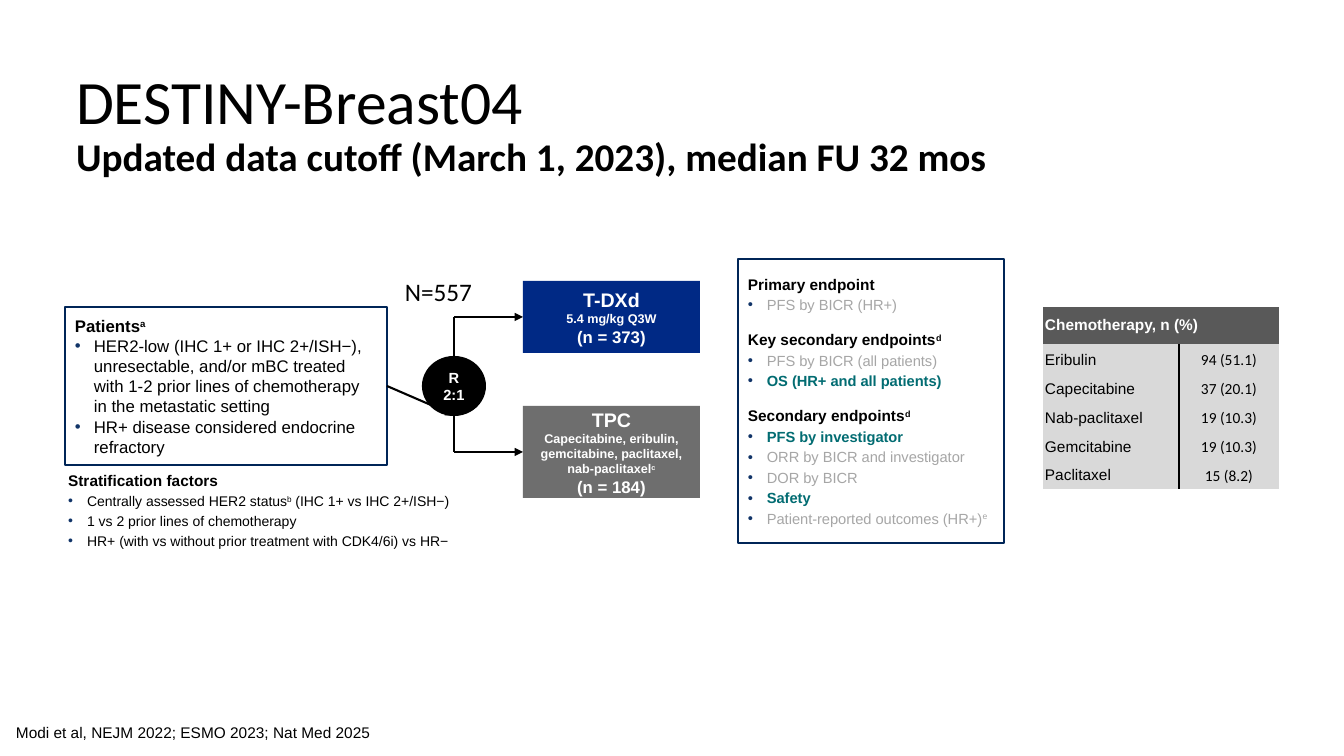
from dataclasses import dataclass
from typing import NamedTuple

from lxml import etree
from pptx import Presentation
from pptx.dml.color import RGBColor
from pptx.enum.shapes import MSO_CONNECTOR, MSO_SHAPE
from pptx.enum.text import MSO_ANCHOR, MSO_AUTO_SIZE, PP_ALIGN
from pptx.oxml.ns import qn
from pptx.util import Pt

RECTANGLE, OVAL = MSO_SHAPE.RECTANGLE, MSO_SHAPE.OVAL
STRAIGHT = MSO_CONNECTOR.STRAIGHT
TOP, MIDDLE = MSO_ANCHOR.TOP, MSO_ANCHOR.MIDDLE
LEFT, CENTER = PP_ALIGN.LEFT, PP_ALIGN.CENTER
NO_AUTOFIT = MSO_AUTO_SIZE.NONE
LEFT_SIDE, RIGHT_SIDE, OVAL_LEFT = 1, 3, 2
EMU_PER_PX = 914400 / 100.8
PLAIN_TABLE = "{2D5ABB26-0587-4C30-8999-92F81FD0307C}"


class Style(NamedTuple):
    size: float
    color: str = "000000"
    bold: bool = False
    font: str = "Arial"
    bullet: bool = False


@dataclass(frozen=True)
class Theme:
    black: str = "000000"
    frame: str = "002557"
    bullet: str = "113468"
    trial_arm: str = "002985"
    control_arm: str = "6E6E6E"
    table_head: str = "595959"
    table_body: str = "D9D9D9"
    title: Style = Style(44, font="Calibri")
    subtitle: Style = Style(28, bold=True, font="Calibri")
    heading: Style = Style(11, bold=True)
    factor: Style = Style(10, bullet=True)
    muted: Style = Style(10.5, "A6A6A6", bullet=True)
    updated: Style = Style(10.5, "026C72", True, bullet=True)
    patient_heading: Style = Style(12, bold=True)
    patient: Style = Style(12, bullet=True)
    arm_name: Style = Style(14, "FFFFFF", True)
    arm_detail: Style = Style(9, "FFFFFF", True)
    arm_count: Style = Style(12, "FFFFFF", True)
    ratio: Style = Style(10.5, "FFFFFF", True)
    table_heading: Style = Style(11, "FFFFFF", True)
    cell: Style = Style(11)
    count: Style = Style(11, font="Calibri")
    enrolled: Style = Style(18, font="Calibri")


THEME = Theme()


def px(length):
    return round(length * EMU_PER_PX)


def rgb(color):
    return RGBColor.from_string(color)


def format_run(run, style):
    run.font.size = Pt(style.size)
    run.font.bold = style.bold
    run.font.name = style.font
    run.font.color.rgb = rgb(style.color)


def set_bullet(paragraph, bullet):
    properties = paragraph._p.get_or_add_pPr()
    indent = px(19) if bullet else 0
    properties.set("marL", str(indent))
    properties.set("indent", str(-indent))
    if not bullet:
        etree.SubElement(properties, qn("a:buNone"))
        return
    color = etree.SubElement(properties, qn("a:buClr"))
    etree.SubElement(color, qn("a:srgbClr"), val=THEME.bullet)
    etree.SubElement(properties, qn("a:buFont"), typeface="Arial")
    etree.SubElement(properties, qn("a:buChar"), char="•")


def write(frame, lines, align=LEFT, before=0, after=0, gap=0, spacing=1.0):
    """Text between carets is raised; a heading after the first line gets the gap."""
    for index, (style, text) in enumerate(lines):
        paragraph = frame.paragraphs[0] if index == 0 else frame.add_paragraph()
        set_bullet(paragraph, style.bullet)
        paragraph.alignment = align
        paragraph.line_spacing = spacing
        extra = 0 if style.bullet else gap
        paragraph.space_before = Pt(before + extra if index else 0)
        paragraph.space_after = Pt(after)
        for position, part in enumerate(text.split("^")):
            if part:
                run = paragraph.add_run()
                run.text = part
                format_run(run, style)
                if position % 2:
                    run._r.get_or_add_rPr().set("baseline", "30000")


def place(shape, left, top, width, height):
    shape.left, shape.top = px(left), px(top)
    shape.width, shape.height = px(width), px(height)


def add_title(slide, name, cutoff):
    title = slide.shapes.title
    place(title, 66, 53, 1159, 146)
    frame = title.text_frame
    frame.text = f"{name}\v{cutoff}"
    frame.vertical_anchor = MIDDLE
    frame.auto_size = NO_AUTOFIT
    heading = frame.paragraphs[0]
    heading.alignment = LEFT
    heading.line_spacing = 0.9
    for run, style in zip(heading.runs, (THEME.title, THEME.subtitle)):
        format_run(run, style)


def add_factors(slide, lines):
    factors = slide.placeholders[1]
    place(factors, 58, 466, 439, 126)
    factors.text_frame.vertical_anchor = TOP
    factors.text_frame.auto_size = NO_AUTOFIT
    write(factors.text_frame, lines, after=2.2)


def add_box(slide, box, lines, kind=RECTANGLE, fill=None, line=None, inset=None, **layout):
    shape = slide.shapes.add_shape(kind, *map(px, box))
    shape.shadow.inherit = False
    if fill:
        shape.fill.solid()
        shape.fill.fore_color.rgb = rgb(fill)
    else:
        shape.fill.background()
    if line:
        shape.line.color.rgb = rgb(line)
        shape.line.width = Pt(1.5)
    else:
        shape.line.fill.background()
    frame = shape.text_frame
    frame.word_wrap = True
    frame.vertical_anchor = MIDDLE
    if inset:
        frame.margin_left = frame.margin_right = px(inset)
        frame.margin_top = frame.margin_bottom = px(inset)
    write(frame, lines, **layout)
    return shape


def add_label(slide, box, style, text, wrap):
    label = slide.shapes.add_textbox(*map(px, box))
    label.text_frame.word_wrap = wrap
    write(label.text_frame, [(style, text)])


def add_line(slide, start, end, arrow=True):
    connector = slide.shapes.add_connector(STRAIGHT, *map(px, start + end))
    connector.line.color.rgb = rgb(THEME.black)
    connector.line.width = Pt(1.5)
    if arrow:
        etree.SubElement(connector.line._get_or_add_ln(), qn("a:tailEnd"), type="triangle")
    etree.SubElement(connector._element.spPr, qn("a:effectLst"))
    return connector


def add_divider(cell, side):
    border = etree.Element(qn(f"a:{side}"), w=str(Pt(1)))
    fill = etree.SubElement(border, qn("a:solidFill"))
    etree.SubElement(fill, qn("a:srgbClr"), val=THEME.black)
    cell._tc.get_or_add_tcPr().insert(0, border)


def fill_cell(cell, text, style, fill, **layout):
    cell.fill.solid()
    cell.fill.fore_color.rgb = rgb(fill)
    cell.vertical_anchor = MIDDLE
    cell.margin_left = cell.margin_right = px(2)
    cell.margin_top = cell.margin_bottom = px(2)
    write(cell.text_frame, [(style, text)], **layout)


def add_chemotherapy_table(slide, heading, regimens):
    graphic = slide.shapes.add_table(len(regimens) + 1, 2, *map(px, (1043, 307, 236, 182)))
    table = graphic.table
    table._tbl.tblPr.find(qn("a:tableStyleId")).text = PLAIN_TABLE
    for column, width in zip(table.columns, (136, 100)):
        column.width = px(width)
    for index, row in enumerate(table.rows):
        row.height = px(29 if index else 37)
    table.cell(0, 0).merge(table.cell(0, 1))
    fill_cell(table.cell(0, 0), heading, THEME.table_heading, THEME.table_head)
    for index, (regimen, count) in enumerate(regimens, start=1):
        name_cell, count_cell = table.cell(index, 0), table.cell(index, 1)
        fill_cell(name_cell, regimen, THEME.cell, THEME.table_body, spacing=1.15)
        fill_cell(count_cell, count, THEME.count, THEME.table_body, align=CENTER, spacing=1.15)
        add_divider(name_cell, "lnR")
        add_divider(count_cell, "lnL")


def add_design(slide):
    t = THEME
    patients = add_box(slide, (65, 307, 322, 158), [
        (t.patient_heading, "Patients^a"),
        (t.patient, "HER2-low (IHC 1+ or IHC 2+/ISH−), unresectable, and/or mBC treated "
                    "with 1-2 prior lines of chemotherapy in the metastatic setting"),
        (t.patient, "HR+ disease considered endocrine refractory")], line=t.frame)
    add_line(slide, (454, 317), (454, 452), arrow=False)
    randomization = add_box(slide, (423, 357, 62, 58), [(t.ratio, "R"), (t.ratio, "2:1")],
                            OVAL, t.black, t.black, inset=4, align=CENTER)
    enrollment = add_line(slide, (387, 386), (423, 386))
    enrollment.begin_connect(patients, RIGHT_SIDE)
    enrollment.end_connect(randomization, OVAL_LEFT)
    arms = (
        (281, 72, t.trial_arm, "T-DXd", "5.4 mg/kg Q3W", "(n = 373)"),
        (406, 92, t.control_arm, "TPC",
         "Capecitabine, eribulin, gemcitabine, paclitaxel, nab-paclitaxel^c", "(n = 184)"))
    for top, height, fill, name, detail, count in arms:
        arm = add_box(slide, (523, top, 177, height), [
            (t.arm_name, name), (t.arm_detail, detail), (t.arm_count, count)],
            fill=fill, align=CENTER)
        middle = top + height // 2
        add_line(slide, (454, middle), (523, middle)).end_connect(arm, LEFT_SIDE)


def main():
    t = THEME
    deck = Presentation()
    deck.slide_width, deck.slide_height = px(1344), px(756)
    slide = deck.slides.add_slide(deck.slide_layouts[1])
    add_title(slide, "DESTINY-Breast04", "Updated data cutoff (March 1, 2023), median FU 32 mos")
    add_factors(slide, [
        (t.heading, "Stratification factors"),
        (t.factor, "Centrally assessed HER2 status^b^ (IHC 1+ vs IHC 2+/ISH−)"),
        (t.factor, "1 vs 2 prior lines of chemotherapy"),
        (t.factor, "HR+ (with vs without prior treatment with CDK4/6i) vs HR−")])
    add_design(slide)
    add_box(slide, (738, 259, 266, 284), [
        (t.heading, "Primary endpoint"),
        (t.muted, "PFS by BICR (HR+)"),
        (t.heading, "Key secondary endpoints^d"),
        (t.muted, "PFS by BICR (all patients)"),
        (t.updated, "OS (HR+ and all patients)"),
        (t.heading, "Secondary endpoints^d"),
        (t.updated, "PFS by investigator"),
        (t.muted, "ORR by BICR and investigator"),
        (t.muted, "DOR by BICR"),
        (t.updated, "Safety"),
        (t.muted, "Patient-reported outcomes (HR+)^e")], line=t.frame, before=2, gap=10)
    add_chemotherapy_table(slide, "Chemotherapy, n (%)", (
        ("Eribulin", "94 (51.1)"), ("Capecitabine", "37 (20.1)"),
        ("Nab-paclitaxel", "19 (10.3)"), ("Gemcitabine", "19 (10.3)"),
        ("Paclitaxel", "15 (8.2)")))
    add_label(slide, (395, 271, 89, 40), t.enrolled, "N=557", wrap=False)
    add_label(slide, (6, 718, 450, 29), t.cell,
              "Modi et al, NEJM 2022; ESMO 2023; Nat Med 2025", wrap=True)
    deck.save("out.pptx")


if __name__ == "__main__":
    main()
